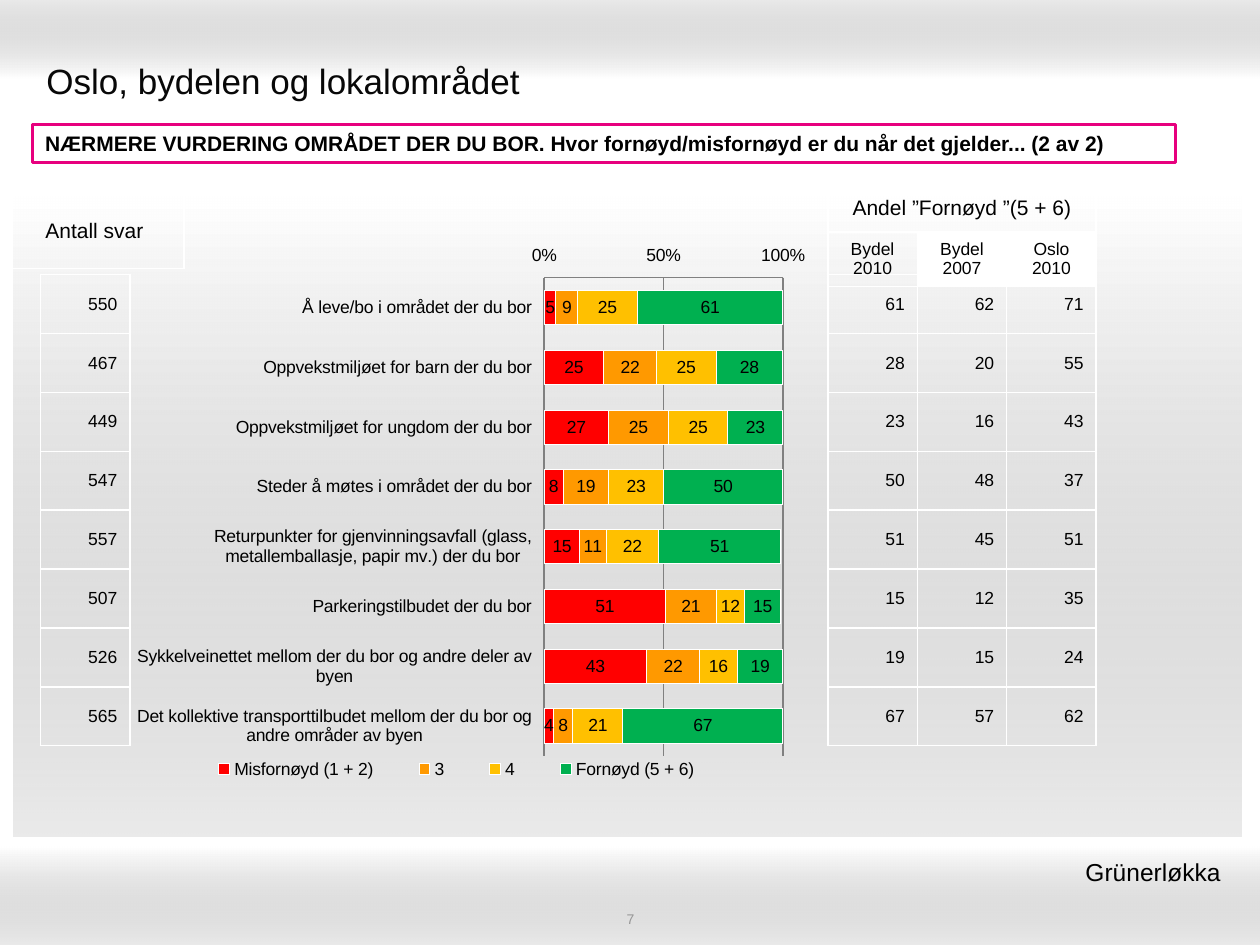
from dataclasses import dataclass

from lxml import etree
from pptx import Presentation
from pptx import util as u
from pptx.chart.data import CategoryChartData
from pptx.dml.color import RGBColor
from pptx.enum import chart as ch
from pptx.enum import shapes, text
from pptx.oxml import parse_xml
from pptx.oxml.ns import nsdecls, qn

FONT = "Arial"
COLORS = {
    "white": "FFFFFF", "black": "000000", "title": "080808", "gray": "999999",
    "number": "969696", "pink": "E7007E", "grid": "808080",
    "red": "FF0000", "orange": "FF9900", "yellow": "FFC000", "green": "00B050",
}
LEFT, CENTER, RIGHT = text.PP_ALIGN.LEFT, text.PP_ALIGN.CENTER, text.PP_ALIGN.RIGHT
TOP, MIDDLE = text.MSO_ANCHOR.TOP, text.MSO_ANCHOR.MIDDLE


@dataclass
class Band:
    left: float
    top: float
    width: float
    height: float
    angle: int  # counter-clockwise degrees


@dataclass
class Label:
    words: str
    left: float
    top: float
    width: float
    height: float
    size: int
    color: str = "black"
    align: int = LEFT
    anchor: int = TOP
    inset: float = 0.05


@dataclass
class Question:
    words: str
    answers: int
    shares: tuple  # one per answer group
    satisfied: tuple  # district 2010, district 2007, Oslo 2010


BANDS = [
    Band(0, 0, 10, 0.62, 90),
    Band(0, 6.72, 10, 0.78, 270),
    Band(0.11, 1.56, 9.74, 5.08, 270),
]
LABELS = [
    Label("Oslo, bydelen og lokalområdet", 0.27, 0.36, 9.45, 0.55, 20, "title", anchor=MIDDLE),
    Label("7", 3.42, 7.22, 3.17, 0.14, 8, "number", CENTER, MIDDLE, 0),
    Label("Grünerløkka ", 6.1, 6.75, 3.74, 0.34, 14, align=RIGHT),
]
GROUPS = [("Misfornøyd (1 + 2)", "red"), ("3", "orange"), ("4", "yellow"),
          ("Fornøyd (5 + 6)", "green")]
QUESTIONS = [
    Question("Å leve/bo i området der du bor", 550, (5, 9, 25, 61), (61, 62, 71)),
    Question("Oppvekstmiljøet for barn der du bor", 467, (25, 22, 25, 28), (28, 20, 55)),
    Question("Oppvekstmiljøet for ungdom der du bor", 449, (27, 25, 25, 23), (23, 16, 43)),
    Question("Steder å møtes i området der du bor", 547, (8, 19, 23, 50), (50, 48, 37)),
    Question("Returpunkter for gjenvinningsavfall (glass, metallemballasje, papir mv.) der du bor",
             557, (15, 11, 22, 51), (51, 45, 51)),
    Question("Parkeringstilbudet der du bor", 507, (51, 21, 12, 15), (15, 12, 35)),
    Question("Sykkelveinettet mellom der du bor og andre deler av byen",
             526, (43, 22, 16, 19), (19, 15, 24)),
    Question("Det kollektive transporttilbudet mellom der du bor og andre områder av byen",
             565, (4, 8, 21, 67), (67, 57, 62)),
]


def rgb(name: str) -> RGBColor:
    return RGBColor.from_string(COLORS[name])


def write(frame, words: str, size: int, color: str = "black", align=LEFT, bold=False) -> None:
    """Fill a text frame, one paragraph per line of words."""
    for index, line in enumerate(words.split("\n")):
        para = frame.add_paragraph() if index else frame.paragraphs[0]
        para.alignment = align
        span = para.add_run()
        span.text = line
        span.font.name, span.font.size, span.font.bold = FONT, u.Pt(size), bold
        span.font.color.rgb = rgb(color)


def add_band(page, band: Band) -> None:
    box = page.shapes.add_shape(
        shapes.MSO_SHAPE.RECTANGLE, u.Inches(band.left), u.Inches(band.top),
        u.Inches(band.width), u.Inches(band.height))
    box.shadow.inherit = False
    box.line.fill.background()
    box.fill.gradient()
    box.fill.gradient_angle = band.angle
    for stop, name in zip(box.fill.gradient_stops, ("white", "gray")):
        stop.color.rgb = rgb(name)
    # The gray end is 20 % opaque
    gray = box.element.spPr.findall(".//" + qn("a:srgbClr"))[-1]
    etree.SubElement(gray, qn("a:alpha"), val="20000")


def add_label(page, label: Label) -> None:
    box = page.shapes.add_textbox(u.Inches(label.left), u.Inches(label.top),
                                  u.Inches(label.width), u.Inches(label.height))
    frame = box.text_frame
    frame.word_wrap = True
    frame.vertical_anchor = label.anchor
    frame.margin_top = frame.margin_bottom = u.Inches(label.inset)
    write(frame, label.words, label.size, label.color, label.align)


def add_heading(page, words: str) -> None:
    box = page.shapes.add_shape(shapes.MSO_SHAPE.RECTANGLE, u.Inches(0.26), u.Inches(0.99),
                                u.Inches(9.07), u.Inches(0.3))
    box.shadow.inherit = False
    box.fill.solid()
    box.fill.fore_color.rgb = rgb("white")
    box.line.color.rgb = rgb("pink")
    box.line.width = u.Pt(2)
    box.text_frame.word_wrap = True
    box.text_frame.vertical_anchor = TOP
    write(box.text_frame, words, 12, bold=True)


def add_grid(page, left: float, top: float, col_width: float, heights: list,
             rows: list, align=CENTER, sizes=(10,)):
    """Add an unfilled table; sizes gives the text size row by row, the last one repeating."""
    count = len(rows[0])
    table = page.shapes.add_table(
        len(rows), count, u.Inches(left), u.Inches(top),
        u.Inches(col_width * count), u.Inches(sum(heights))).table
    table.first_row = table.horz_banding = False
    for column in table.columns:
        column.width = u.Inches(col_width)
    for r, (row, height) in enumerate(zip(rows, heights)):
        table.rows[r].height = u.Inches(height)
        for c, words in enumerate(row):
            cell = table.cell(r, c)
            cell.fill.background()
            cell.vertical_anchor = MIDDLE
            write(cell.text_frame, str(words), sizes[min(r, len(sizes) - 1)], align=align)
    return table


def set_layout(parent, position: int, inner: bool, **place: float) -> None:
    """Give a plot area or legend a fixed place, in fractions of the chart."""
    for old in parent.findall(qn("c:layout")):
        parent.remove(old)
    target = '<c:layoutTarget val="inner"/>' if inner else ""
    modes = '<c:xMode val="edge"/><c:yMode val="edge"/>'
    sides = "".join(f'<c:{side} val="{value}"/>' for side, value in place.items())
    parent.insert(position, parse_xml(
        f'<c:layout {nsdecls("c")}><c:manualLayout>{target}{modes}{sides}'
        "</c:manualLayout></c:layout>"))


def add_answer_chart(page) -> None:
    data = CategoryChartData(number_format="0")
    data.categories = [question.words for question in QUESTIONS]
    for index, (name, _) in enumerate(GROUPS):
        data.add_series(name, [question.shares[index] for question in QUESTIONS])
    chart = page.shapes.add_chart(
        ch.XL_CHART_TYPE.BAR_STACKED, u.Inches(0.98), u.Inches(1.86),
        u.Inches(5.51), u.Inches(4.54), data).chart
    chart.has_title = False
    chart.font.name, chart.font.size = FONT, u.Pt(10)
    chart.font.color.rgb = rgb("black")

    # Bars
    plot = chart.plots[0]
    plot.gap_width, plot.overlap, plot.vary_by_categories = 75, 100, False
    for series, (_, color) in zip(plot.series, GROUPS):
        series.format.fill.solid()
        series.format.fill.fore_color.rgb = rgb(color)
        series.format.line.color.rgb = rgb("white")
        series.data_labels.show_value = True
        series.data_labels.number_format = "0"
        series.data_labels.number_format_is_linked = False

    # Axes
    questions, percent = chart.category_axis, chart.value_axis
    questions.reverse_order = True
    questions.major_tick_mark = ch.XL_TICK_MARK.NONE
    percent.minimum_scale, percent.maximum_scale, percent.major_unit = 0, 100, 50
    percent.major_tick_mark = ch.XL_TICK_MARK.INSIDE
    percent.tick_labels.number_format = "General\\%"
    percent.tick_labels.number_format_is_linked = False
    percent.major_gridlines.format.line.color.rgb = rgb("grid")
    for axis in (questions, percent):
        axis.tick_label_position = ch.XL_TICK_LABEL_POSITION.LOW
        axis.format.line.color.rgb = rgb("grid")

    # Legend and placement
    chart.has_legend = True
    chart.legend.position = ch.XL_LEGEND_POSITION.BOTTOM
    chart.legend.include_in_layout = False
    set_layout(plot._element.getparent(), 0, True, x=0.606, y=0.076, w=0.344, h=0.836)
    set_layout(chart.legend._element, 1, False, x=0.08, y=0.91, w=0.8, h=0.05)


def main() -> None:
    deck = Presentation()
    deck.slide_width, deck.slide_height = u.Inches(10), u.Inches(7.5)
    page = deck.slides.add_slide(deck.slide_layouts[6])

    for band in BANDS:
        add_band(page, band)
    for label in LABELS:
        add_label(page, label)
    add_heading(page, "NÆRMERE VURDERING OMRÅDET DER DU BOR. "
                      "Hvor fornøyd/misfornøyd er du når det gjelder... (2 av 2)")
    add_answer_chart(page)

    # Figures on either side of the chart
    heights = [3.74 / len(QUESTIONS)] * len(QUESTIONS)
    add_grid(page, 6.57, 2.18, 0.71, heights, [q.satisfied for q in QUESTIONS], RIGHT)
    add_grid(page, 0.32, 2.18, 0.71, heights, [(q.answers,) for q in QUESTIONS], RIGHT)

    # Column headings
    add_grid(page, 0.04, 1.54, 1.42, [0.59], [("Antall svar",)], sizes=(12,))
    header = add_grid(page, 6.57, 1.47, 0.71, [0.37, 0.43],
                      [("Andel ”Fornøyd ”(5 + 6)", "", ""),
                       ("Bydel\n2010", "Bydel\n2007", "Oslo\n2010")], sizes=(12, 10))
    header.cell(0, 0).merge(header.cell(0, 2))
    for column in (1, 2):
        fill = header.cell(1, column).fill
        fill.solid()
        fill.fore_color.rgb = rgb("white")

    deck.save("out.pptx")


if __name__ == "__main__":
    main()
